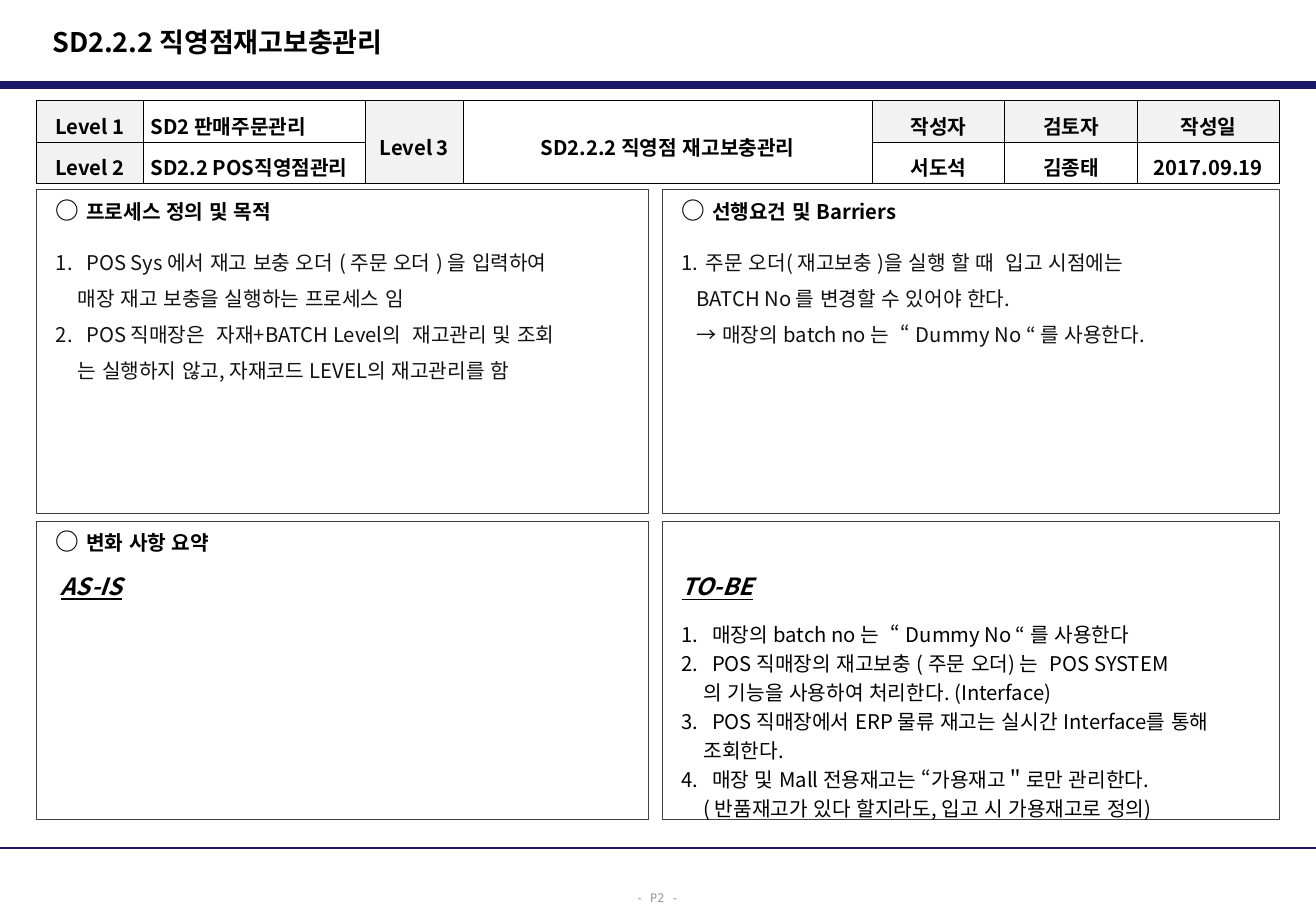
"""Build the process definition slide for store stock refill."""
from lxml import etree
from pptx import Presentation
from pptx.dml.color import RGBColor
from pptx.enum.lang import MSO_LANGUAGE_ID
from pptx.enum.shapes import MSO_CONNECTOR
from pptx.enum.text import MSO_ANCHOR, MSO_AUTO_SIZE, PP_ALIGN
from pptx.oxml.ns import qn
from pptx.util import Inches, Pt

LINE = MSO_CONNECTOR.STRAIGHT
TOP, MID = MSO_ANCHOR.TOP, MSO_ANCHOR.MIDDLE
FIXED = MSO_AUTO_SIZE.NONE
LEFT, CENTER = PP_ALIGN.LEFT, PP_ALIGN.CENTER
KOREAN = MSO_LANGUAGE_ID.KOREAN
SANS, MONO = "Noto Sans CJK KR", "DejaVu Sans Mono"
BLACK, INK, NAVY, EDGE, PALE, GRAY = (
    "000000", "111111", "191966", "404040", "F2F2F2", "969696")

WIDE, HIGH = 10.83, 7.5
TITLE = "SD2.2.2 직영점재고보충관리"
PAGE = "- P2 -"
RULES = [(0.7, 4.5), (6.98, 1.5)]
COLS = [0.88, 1.83, 0.8, 3.37, 1.09, 1.09, 1.17]
ROW = 0.34
CELLS = [
    ["Level 1", "SD2 판매주문관리", "Level 3", "SD2.2.2 직영점 재고보충관리",
     "작성자", "검토자", "작성일"],
    ["Level 2", "SD2.2 POS직영점관리", None, None,
     "서도석", "김종태", "2017.09.19"],
]
SHADED = {(0, 0), (1, 0), (0, 2), (0, 4), (0, 5), (0, 6)}
NAMES = {(0, 1), (1, 1)}
TALL = [2, 3]

GRID_X = [(0.3, 5.04), (5.45, 5.08)]
GRID_Y = [(1.56, 2.67), (4.29, 2.46)]
BOXES = [
    dict(col=0, row=0, inset=0.05, hang=0.25, tab=0.18, lead=1.3,
         gap=2.6, skip=11.6, ink=INK, lines=[
             ("head", "프로세스 정의 및 목적"),
             ("item", "POS Sys 에서 재고 보충 오더 ( 주문 오더 ) 을 입력하여"),
             ("more", "매장 재고 보충을 실행하는 프로세스 임"),
             ("item", "POS 직매장은  자재+BATCH Level의  재고관리 및 조회"),
             ("more", "는 실행하지 않고, 자재코드 LEVEL의 재고관리를 함")]),
    dict(col=0, row=1, inset=0.05, tab=0.04, skip=9.5, lines=[
        ("head", "변화 사항 요약"),
        ("mark", "AS-IS")]),
    dict(col=1, row=0, inset=0.05, hang=0.2, tab=0.12, lead=1.3,
         gap=2.6, skip=11.6, ink=INK, lines=[
             ("head", "선행요건 및 Barriers"),
             ("item", "주문 오더( 재고보충 )을 실행 할 때  입고 시점에는"),
             ("more", "BATCH No 를 변경할 수 있어야 한다."),
             ("more", "→ 매장의 batch no 는  “ Dummy No “ 를 사용한다.")]),
    dict(col=1, row=1, inset=0.42, hang=0.25, tab=0.18, lead=1.2,
         gap=0, skip=9.8, ink=BLACK, lines=[
             ("mark", "TO-BE"),
             ("item", "매장의 batch no 는  “ Dummy No “ 를 사용한다"),
             ("item", "POS 직매장의 재고보충 ( 주문 오더) 는  POS SYSTEM"),
             ("more", "의 기능을 사용하여 처리한다. (Interface)"),
             ("item", "POS 직매장에서 ERP 물류 재고는 실시간 Interface를 통해"),
             ("more", "조회한다."),
             ("item", "매장 및 Mall 전용재고는 “가용재고＂로만 관리한다."),
             ("more", "( 반품재고가 있다 할지라도, 입고 시 가용재고로 정의)")]),
]


def paint(hue):
    return RGBColor.from_string(hue)


def style(font, size, hue=BLACK, bold=False, face=SANS):
    font.size, font.bold, font.name = Pt(size), bold, face
    font.color.rgb = paint(hue)
    font.language_id = KOREAN
    font._rPr.set("kern", "0")
    east = etree.SubElement(font._rPr, qn("a:ea"))
    east.set("typeface", face)
    font._rPr.find(qn("a:latin")).addnext(east)


def indent(para, left, first, num=None):
    props = para._p.get_or_add_pPr()
    props.set("marL", str(Inches(left)))
    props.set("indent", str(Inches(first)))
    if num is None:
        etree.SubElement(props, qn("a:buNone"))
    else:
        etree.SubElement(props, qn("a:buAutoNum"),
                         type="arabicPeriod", startAt=str(num))


def pad(frame, left, top, right, low):
    frame.margin_left, frame.margin_top = Inches(left), Inches(top)
    frame.margin_right, frame.margin_bottom = Inches(right), Inches(low)


def place(shape, *area):
    shape.left, shape.top, shape.width, shape.height = map(Inches, area)


def add_rule(slide, y, weight):
    rule = slide.shapes.add_connector(
        LINE, 0, Inches(y), Inches(WIDE), Inches(y))
    rule.line.color.rgb, rule.line.width = paint(NAVY), Pt(weight)
    etree.SubElement(rule._element.spPr, qn("a:effectLst"))


def add_title(slide):
    title = slide.shapes.title
    place(title, 0.33, 0.15, 7.11, 0.38)
    frame = title.text_frame
    frame.text, frame.vertical_anchor = TITLE, MID
    frame.auto_size = FIXED
    para = frame.paragraphs[0]
    para.alignment = LEFT
    style(para.font, 16, bold=True)


def add_page(slide):
    frame = slide.shapes.add_textbox(
        *map(Inches, (5.13, 7.25, 0.56, 0.25))).text_frame
    frame.text, frame.word_wrap = PAGE, False
    para = frame.paragraphs[0]
    para.alignment, para.line_spacing = CENTER, 1.3
    style(para.font, 7, GRAY, face=MONO)


def border(cell):
    props = cell._tc.get_or_add_tcPr()
    for at, side in enumerate(("lnL", "lnR", "lnT", "lnB")):
        edge = etree.Element(qn("a:" + side), w=str(Pt(0.5)))
        fill = etree.SubElement(edge, qn("a:solidFill"))
        etree.SubElement(fill, qn("a:srgbClr"), val=BLACK)
        props.insert(at, edge)


def add_grid(slide):
    table = slide.shapes.add_table(
        len(CELLS), len(COLS), Inches(0.3), Inches(0.83),
        Inches(sum(COLS)), Inches(ROW * len(CELLS))).table
    for col, width in zip(table.columns, COLS):
        col.width = Inches(width)
    for row in table.rows:
        row.height = Inches(ROW)
    for col in TALL:
        table.cell(0, col).merge(table.cell(1, col))
    for y, row in enumerate(CELLS):
        for x, text in enumerate(row):
            cell = table.cell(y, x)
            cell.fill.solid()
            cell.fill.fore_color.rgb = paint(
                PALE if (y, x) in SHADED else "FFFFFF")
            border(cell)
            if text is None:
                continue
            cell.text, cell.vertical_anchor = text, MID
            pad(cell, 0.06, 0.01, 0.06, 0.01)
            para = cell.text_frame.paragraphs[0]
            para.alignment = LEFT if (y, x) in NAMES else CENTER
            para.line_spacing = 1.3
            style(para.font, 12, bold=True)


def fill_box(shape, box):
    place(shape, GRID_X[box["col"]][0], GRID_Y[box["row"]][0],
          GRID_X[box["col"]][1], GRID_Y[box["row"]][1])
    shape.line.color.rgb, shape.line.width = paint(EDGE), Pt(0.5)
    frame = shape.text_frame
    frame.auto_size, frame.vertical_anchor = FIXED, TOP
    pad(frame, 0.16, box["inset"], 0.1, 0.05)
    num = 0
    for at, (kind, text) in enumerate(box["lines"]):
        para = frame.paragraphs[0] if at == 0 else frame.add_paragraph()
        para.alignment = LEFT
        para.line_spacing = box["lead"] if kind in ("item", "more") else 1.0
        para.space_before = Pt((0, box["skip"])[at] if at < 2 else box["gap"])
        if kind == "item":
            num += 1
            indent(para, box["hang"], -box["hang"], num)
        else:
            indent(para, box["tab"] if at else 0, 0)
        if kind == "head":
            for part, size in (("○ ", 14), (text, 12)):
                run = para.add_run()
                run.text = part
                style(run.font, size, bold=True)
            continue
        para.add_run().text = text
        if kind == "mark":
            style(para.font, 14, bold=True)
            para.font.italic = para.font.underline = True
        else:
            style(para.font, 12, box["ink"])


def main():
    deck = Presentation()
    deck.slide_width, deck.slide_height = Inches(WIDE), Inches(HIGH)
    slide = deck.slides.add_slide(deck.slide_layouts[4])
    for y, weight in RULES:
        add_rule(slide, y, weight)
    add_title(slide)
    add_grid(slide)
    bodies = [s for s in slide.placeholders if 0 < s.placeholder_format.idx < 5]
    for shape, box in zip(bodies, BOXES):
        fill_box(shape, box)
    add_page(slide)
    deck.save("out.pptx")


if __name__ == "__main__":
    main()
